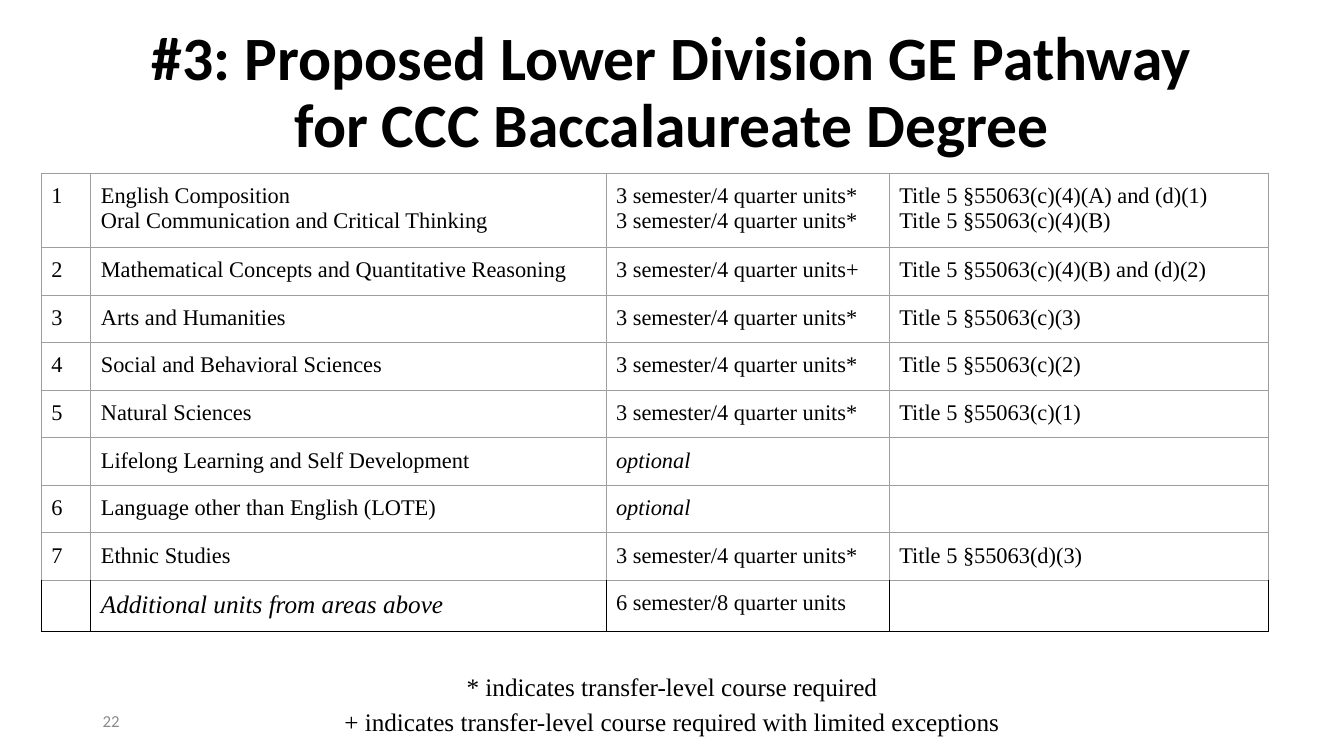
from lxml.etree import SubElement
from pptx import Presentation
from pptx.dml.color import RGBColor
from pptx.enum.text import MSO_ANCHOR, MSO_AUTO_SIZE, PP_ALIGN
from pptx.oxml.ns import qn
from pptx.util import Inches, Pt

BLACK = RGBColor(0x00, 0x00, 0x00)
GRAY = RGBColor(0x8C, 0x8C, 0x8C)
RULE = RGBColor(0x9E, 0x9E, 0x9E)
SANS, SERIF = "Calibri", "Times New Roman"
PAGE_WIDTH, PAGE_HEIGHT = Inches(13.33), Inches(7.5)

# Relative widths and heights of the table grid
COLUMN_SHARES = (4.03, 41.99, 23.09, 30.9)
ROW_SHARES = (74, *[47.15] * 7, 51)

UNITS = "3 semester/4 quarter units*"
PATHWAY = [
    ("1", "English Composition\nOral Communication and Critical Thinking",
     f"{UNITS}\n{UNITS}",
     "Title 5 §55063(c)(4)(A) and (d)(1)\nTitle 5 §55063(c)(4)(B)"),
    ("2", "Mathematical Concepts and Quantitative Reasoning",
     "3 semester/4 quarter units+", "Title 5 §55063(c)(4)(B) and (d)(2)"),
    ("3", "Arts and Humanities", UNITS, "Title 5 §55063(c)(3)"),
    ("4", "Social and Behavioral Sciences", UNITS, "Title 5 §55063(c)(2)"),
    ("5", "Natural Sciences", UNITS, "Title 5 §55063(c)(1)"),
    ("", "Lifelong Learning and Self Development", "optional", ""),
    ("6", "Language other than English (LOTE)", "optional", ""),
    ("7", "Ethnic Studies", UNITS, "Title 5 §55063(d)(3)"),
    ("", "Additional units from areas above", "6 semester/8 quarter units", ""),
]


def area(left, top, width, height):
    """Turn percentages of the page into lengths."""
    return (int(PAGE_WIDTH * left / 100), int(PAGE_HEIGHT * top / 100),
            int(PAGE_WIDTH * width / 100), int(PAGE_HEIGHT * height / 100))


def style_text(frame, font, size, color=BLACK, bold=False, italic=False,
               align=PP_ALIGN.LEFT, spacing=1.0):
    for para in frame.paragraphs:
        para.alignment = align
        para.line_spacing = spacing
        for span in para.runs:
            span.font.name = font
            span.font.size = Pt(size)
            span.font.color.rgb = color
            span.font.bold = bold
            span.font.italic = italic


def add_title(page, text):
    title = page.shapes.title
    title.left, title.top, title.width, title.height = area(8.78, 2.8, 82.45, 19.33)
    frame = title.text_frame
    frame.text = text
    frame.word_wrap = True
    frame.auto_size = MSO_AUTO_SIZE.NONE
    frame.vertical_anchor = MSO_ANCHOR.MIDDLE
    style_text(frame, SANS, 44, bold=True, align=PP_ALIGN.CENTER, spacing=0.9)


def add_text(page, place, text, anchor, padding, **style):
    box = page.shapes.add_textbox(*area(*place))
    frame = box.text_frame
    frame.word_wrap = True
    frame.vertical_anchor = anchor
    frame.margin_top = frame.margin_bottom = Inches(padding)
    frame.text = text
    style_text(frame, **style)


def set_borders(cell, colors):
    """Draw the left, right, top and bottom lines, in that order."""
    properties = cell._tc.get_or_add_tcPr()
    for index, (side, color) in enumerate(zip("LRTB", colors)):
        line = SubElement(properties, qn(f"a:ln{side}"), w=str(Pt(0.75)))
        fill = SubElement(line, qn("a:solidFill"))
        SubElement(fill, qn("a:srgbClr"), val=str(color))
        properties.insert(index, line)


def fill_cell(cell, text, is_last_row):
    cell.fill.background()
    set_borders(cell, (BLACK, BLACK, RULE, BLACK) if is_last_row else [RULE] * 4)
    if text:
        cell.margin_left = cell.margin_right = Inches(0.1)
        cell.margin_top = cell.margin_bottom = Inches(0.1)
        cell.text_frame.text = text
        is_additional = text.startswith("Additional")
        style_text(cell.text_frame, SERIF, 18 if is_additional else 16,
                   italic=is_additional or text == "optional")


def add_pathway_table(page, rows):
    left, top, width, height = area(3.08, 22.93, 91.3, 60.67)
    table = page.shapes.add_table(len(rows), len(COLUMN_SHARES),
                                  left, top, width, height).table
    table.first_row = table.horz_banding = False
    for column, share in zip(table.columns, COLUMN_SHARES):
        column.width = int(width * share / sum(COLUMN_SHARES))
    for row, share in zip(table.rows, ROW_SHARES):
        row.height = int(height * share / sum(ROW_SHARES))
    for row, texts in zip(table.rows, rows):
        for cell, text in zip(row.cells, texts):
            fill_cell(cell, text, texts is rows[-1])


def main():
    deck = Presentation()
    deck.slide_width, deck.slide_height = PAGE_WIDTH, PAGE_HEIGHT
    page = deck.slides.add_slide(deck.slide_layouts[5])

    # Heading
    add_title(page, "#3: Proposed Lower Division GE Pathway\v"
                    "for CCC Baccalaureate Degree")

    # Pathway areas, units and regulations
    add_pathway_table(page, PATHWAY)

    # Legend and page number
    add_text(page, (23.26, 86.93, 53.49, 12),
             "* indicates transfer-level course required\n"
             "+ indicates transfer-level course required with limited exceptions",
             MSO_ANCHOR.TOP, 0.1, font=SERIF, size=18,
             align=PP_ALIGN.CENTER, spacing=1.15)
    add_text(page, (6.9, 92.67, 22.5, 5.33), "22", MSO_ANCHOR.MIDDLE, 0.05,
             font=SANS, size=12, color=GRAY)

    deck.save("out.pptx")


if __name__ == "__main__":
    main()
